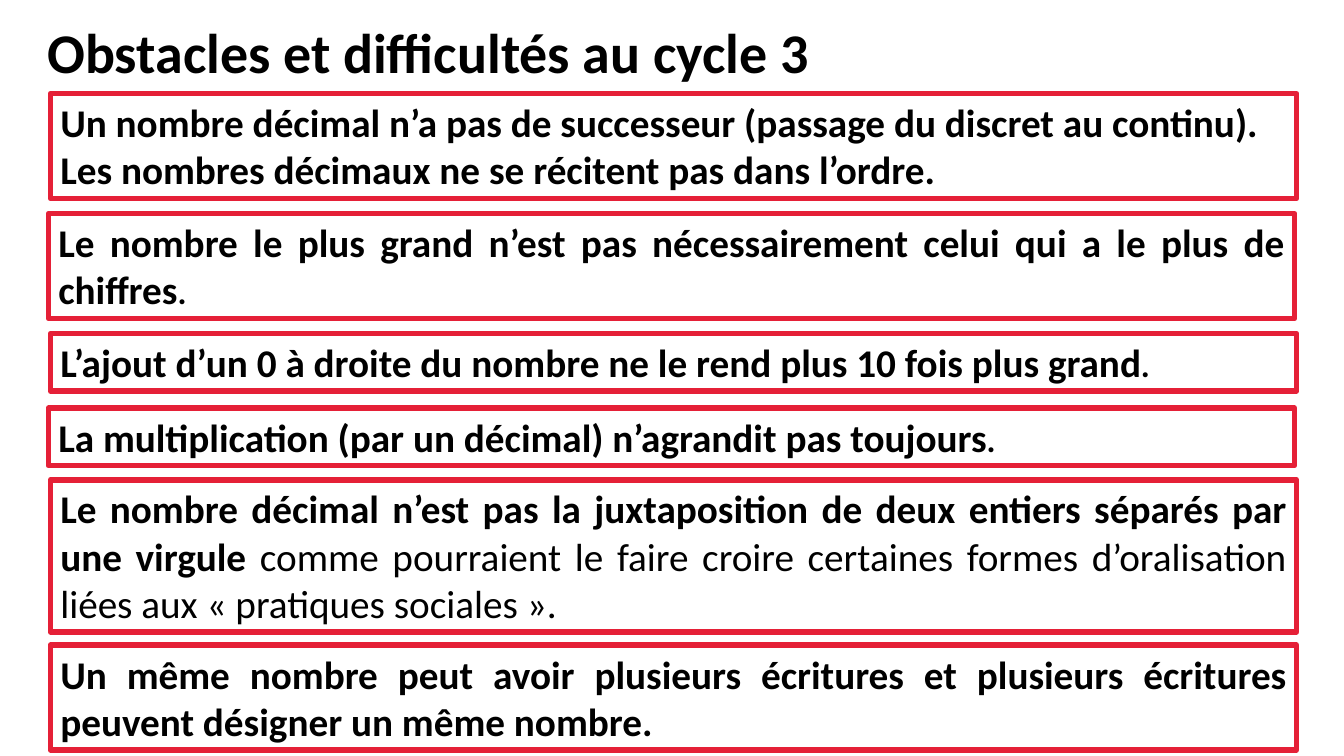
"""Build the slide on obstacles and difficulties with decimal numbers in cycle 3."""
from pptx import Presentation
from pptx.dml.color import RGBColor
from pptx.enum import text
from pptx.util import Inches, Pt


def tint(code):
    return RGBColor.from_string(code)


def write(shape, runs, align):
    frame = shape.text_frame
    frame.word_wrap = True
    frame.auto_size = text.MSO_AUTO_SIZE.SHAPE_TO_FIT_TEXT
    frame.vertical_anchor = text.MSO_ANCHOR.TOP
    para = frame.paragraphs[0]
    para.alignment = align
    para.font.name = "Calibri"
    para.font.color.rgb = tint("000000")
    for words, size, bold in runs:
        run = para.add_run()
        run.text = words
        run.font.size = Pt(size)
        run.font.bold = bold


LEFT, EVEN = text.PP_ALIGN.LEFT, text.PP_ALIGN.JUSTIFY
DOT = (".", 24, True)

deck = Presentation()
deck.slide_width, deck.slide_height = Inches(13.33), Inches(7.5)
slide = deck.slides.add_slide(deck.slide_layouts[5])

title = slide.shapes.title
title.left, title.top = Inches(0.37), Inches(0.12)
title.width, title.height = Inches(12.82), Inches(0.77)
write(title, [("Obstacles et difficultés au cycle 3", 40, True)], LEFT)

boxes = [
    (0.5, 0.93, 1.04, 4, LEFT, [
        ("Un nombre décimal n’a pas de successeur (passage du discret au continu). "
         "Les nombres décimaux ne se récitent pas dans l’ordre.", 28, True)]),
    (0.48, 2.12, 1.04, 4, EVEN, [
        ("Le nombre le plus grand n’est pas nécessairement celui qui a le plus de "
         "chiffres", 28, True), DOT]),
    (0.5, 3.31, 0.57, 4, LEFT, [
        ("L’ajout d’un 0 à droite du nombre ne le rend plus 10 fois plus grand",
         28, True), DOT]),
    (0.48, 4.05, 0.57, 4, LEFT, [
        ("La multiplication (par un décimal) n’agrandit pas toujours", 28, True), DOT]),
    (0.5, 4.76, 1.51, 4, EVEN, [
        ("Le nombre décimal n’est pas la juxtaposition de deux entiers séparés par "
         "une virgule ", 28, True),
        ("comme pourraient le faire croire certaines formes d’oralisation liées aux "
         "« pratiques sociales ».", 28, False)]),
    (0.5, 6.4, 1.04, 3.75, EVEN, [
        ("Un même nombre peut avoir plusieurs écritures et plusieurs écritures "
         "peuvent désigner un même nombre.", 28, True)]),
]
for left, top, height, line, align, runs in boxes:
    box = slide.shapes.add_textbox(
        Inches(left), Inches(top), Inches(12.36), Inches(height))
    box.line.color.rgb = tint("E52037")
    box.line.width = Pt(line)
    write(box, runs, align)

deck.save("out.pptx")
